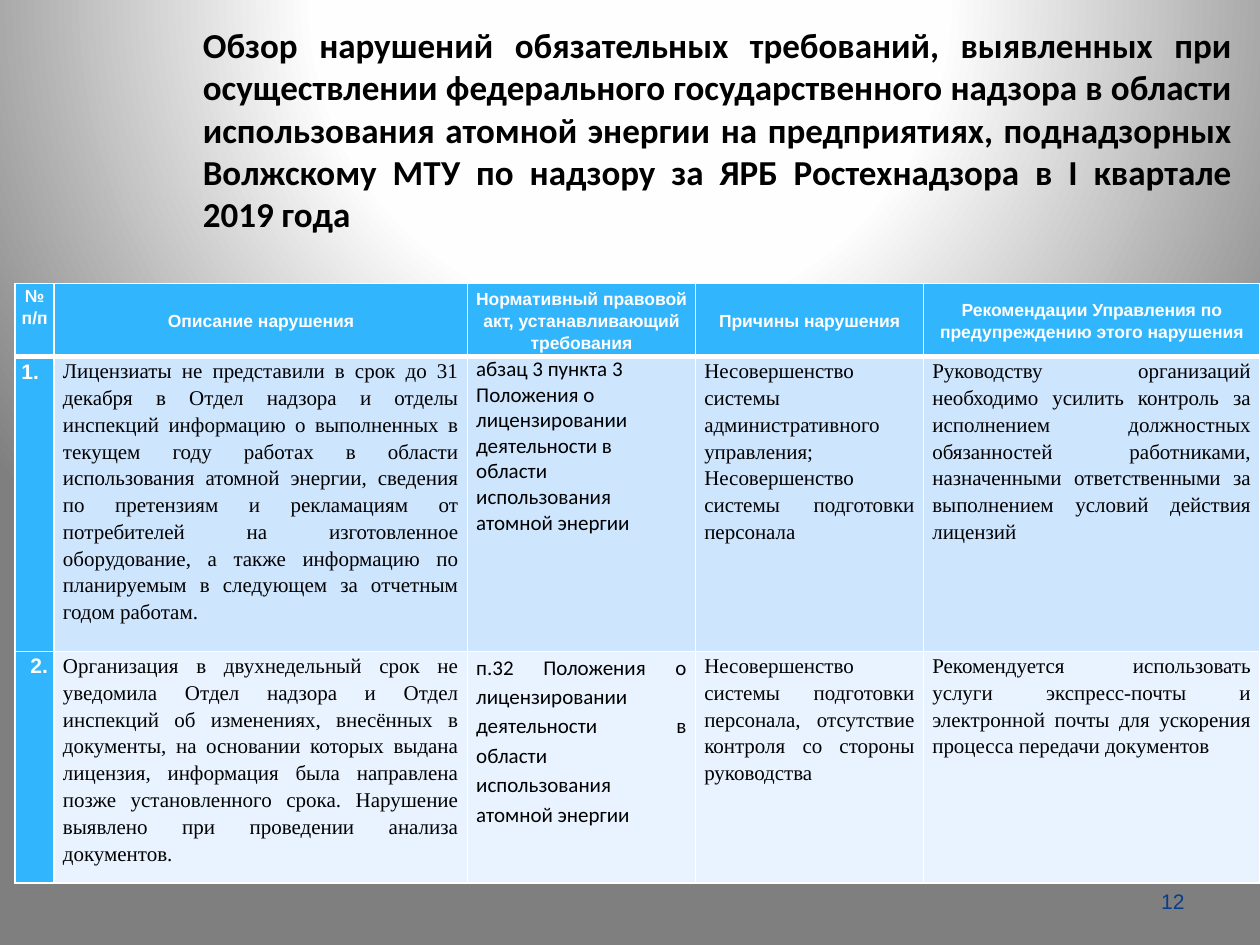
from dataclasses import dataclass

from lxml import etree
from pptx import Presentation
from pptx import util as u
from pptx.dml.color import RGBColor
from pptx.enum import text
from pptx.oxml import ns, parse_xml

WIDE, HIGH = u.Inches(10), u.Inches(7.5)
HUES = {
    "black": "000000",
    "white": "FFFFFF",
    "head": "31B6FD",
    "odd": "CEE5FE",
    "even": "E8F3FF",
    "page": "073E87",
    "glow": "FEFEFE",
    "dusk": "7F7F7F",
}
ALIGN = text.PP_ALIGN
ANCHOR = text.MSO_ANCHOR
COLS = [3.1, 32.8, 18.1, 18.1, 26.7]
ROWS = [7.73, 31.2, 22.67]


@dataclass
class Style:
    font: str
    size: float
    hue: str = "black"
    bold: bool = False
    align: ALIGN = ALIGN.JUSTIFY
    lead: float = 1.15


@dataclass
class Cell:
    lines: list[str]
    style: Style
    fill: str
    pad: float = 0.7
    anchor: ANCHOR = ANCHOR.TOP


TITLE = Style("Calibri", 20, bold=True, lead=1)
PAGE = Style("Arial", 12, "page", align=ALIGN.RIGHT, lead=1)
HEAD = Style("Arial", 10, "white", True, ALIGN.CENTER)
FIRST = Style("Arial", 12, "white", True, ALIGN.LEFT)
NEXT = Style("Arial", 12, "white", True, ALIGN.RIGHT)
BODY = Style("Times New Roman", 12)
LAW = Style("Calibri", 12)
LOOSE = Style("Calibri", 12, align=ALIGN.LEFT, lead=1)


def across(share: float) -> int:
    return round(WIDE * share / 100)


def down(share: float) -> int:
    return round(HIGH * share / 100)


def place(shape, left: float, top: float, width: float, height: float) -> None:
    shape.left, shape.top = across(left), down(top)
    shape.width, shape.height = across(width), down(height)


def write(frame, lines: list[str], style: Style) -> None:
    frame.word_wrap = True
    for i, line in enumerate(lines):
        para = frame.paragraphs[0] if i == 0 else frame.add_paragraph()
        para.alignment = style.align
        para.line_spacing = style.lead
        para.space_before = u.Pt(0)
        run = para.add_run()
        run.text = line
        run.font.name = style.font
        run.font.size = u.Pt(style.size)
        run.font.bold = style.bold
        run.font.color.rgb = RGBColor.from_string(HUES[style.hue])


def edge(cell, widths: dict[str, float]) -> None:
    props = cell._tc.get_or_add_tcPr()
    for i, (side, width) in enumerate(widths.items()):
        line = etree.Element(ns.qn(f"a:{side}"), w=str(u.Pt(width)))
        fill = etree.SubElement(line, ns.qn("a:solidFill"))
        etree.SubElement(fill, ns.qn("a:srgbClr"), val=HUES["white"])
        props.insert(i, line)


def draw(cell, data: Cell, top: float, base: float) -> None:
    cell.margin_left = cell.margin_right = across(data.pad)
    cell.margin_top = cell.margin_bottom = 0
    cell.vertical_anchor = data.anchor
    cell.fill.solid()
    cell.fill.fore_color.rgb = RGBColor.from_string(HUES[data.fill])
    write(cell.text_frame, data.lines, data.style)
    edge(cell, {"lnL": 1, "lnR": 1, "lnT": top, "lnB": base})


def shade(slide) -> None:
    stops = "".join(
        f'<a:gs pos="{spot * 1000}"><a:srgbClr val="{HUES[hue]}"/></a:gs>'
        for spot, hue in [(0, "white"), (40, "glow"), (100, "dusk")]
    )
    back = parse_xml(
        f'<p:bg {ns.nsdecls("p", "a")}><p:bgPr><a:gradFill rotWithShape="1">'
        f'<a:gsLst>{stops}</a:gsLst><a:path path="circle">'
        '<a:fillToRect l="50000" t="-80000" r="50000" b="180000"/></a:path>'
        "</a:gradFill><a:effectLst/></p:bgPr></p:bg>"
    )
    slide.element.cSld.insert(0, back)


def head(line: str) -> Cell:
    return Cell([line], HEAD, "head", 0.5, ANCHOR.MIDDLE)


GRID = [
    [
        Cell(["№", "п/п"], HEAD, "head", 0.5),
        head("Описание нарушения"),
        head("Нормативный правовой акт, устанавливающий требования"),
        head("Причины нарушения"),
        head("Рекомендации Управления по предупреждению этого нарушения"),
    ],
    [
        Cell(["1."], FIRST, "head", 0.5),
        Cell(["Лицензиаты не представили в срок до 31 декабря в Отдел надзора и "
              "отделы инспекций информацию о выполненных в текущем году работах "
              "в области использования атомной энергии, сведения по претензиям "
              "и рекламациям от потребителей на изготовленное оборудование, а "
              "также информацию по планируемым в следующем за отчетным годом "
              "работам."], BODY, "odd"),
        Cell(["абзац 3 пункта 3 Положения о",
              "лицензировании деятельности в области использования атомной "
              "энергии"], LOOSE, "odd"),
        Cell(["Несовершенство системы административного управления;",
              "Несовершенство системы подготовки персонала"], BODY, "odd"),
        Cell(["Руководству организаций необходимо усилить контроль за "
              "исполнением должностных обязанностей работниками, назначенными "
              "ответственными за выполнением условий действия лицензий"],
             BODY, "odd"),
    ],
    [
        Cell(["2."], NEXT, "head", 0.5),
        Cell(["Организация в двухнедельный срок не уведомила Отдел надзора и "
              "Отдел инспекций об изменениях, внесённых в документы, на "
              "основании которых выдана лицензия, информация была направлена "
              "позже установленного срока. Нарушение выявлено при проведении "
              "анализа документов."], BODY, "even"),
        Cell(["п.32 Положения о лицензировании деятельности в области "
              "использования атомной энергии"], LAW, "even"),
        Cell(["Несовершенство системы подготовки персонала, отсутствие "
              "контроля со стороны руководства"], BODY, "even"),
        Cell(["Рекомендуется использовать услуги экспресс-почты и электронной "
              "почты для ускорения процесса передачи документов"],
             BODY, "even"),
    ],
]


def main() -> None:
    deck = Presentation()
    deck.slide_width, deck.slide_height = WIDE, HIGH
    slide = deck.slides.add_slide(deck.slide_layouts[5])
    shade(slide)

    title = slide.shapes.title
    place(title, 15.1, 1.87, 83.7, 25.07)
    title.text_frame.vertical_anchor = ANCHOR.TOP
    title.text_frame.auto_size = text.MSO_AUTO_SIZE.NONE
    write(title.text_frame, [
        "Обзор нарушений обязательных требований, выявленных при осуществлении "
        "федерального государственного надзора в области использования атомной "
        "энергии на предприятиях, поднадзорных Волжскому МТУ по надзору за ЯРБ "
        "Ростехнадзора в I квартале 2019 года"], TITLE)

    page = slide.shapes.add_textbox(0, 0, 0, 0)
    place(page, 71.7, 92.67, 23.3, 5.33)
    page.text_frame.vertical_anchor = ANCHOR.MIDDLE
    write(page.text_frame, ["12"], PAGE)

    table = slide.shapes.add_table(
        len(ROWS), len(COLS), across(1.2), down(30),
        across(sum(COLS)), down(sum(ROWS))).table
    for col, share in zip(table.columns, COLS):
        col.width = across(share)
    for row, share in zip(table.rows, ROWS):
        row.height = down(share)
    for r, row in enumerate(GRID):
        for c, data in enumerate(row):
            draw(table.cell(r, c), data, 3 if r == 1 else 1, 3 if r == 0 else 1)

    deck.save("out.pptx")


if __name__ == "__main__":
    main()
